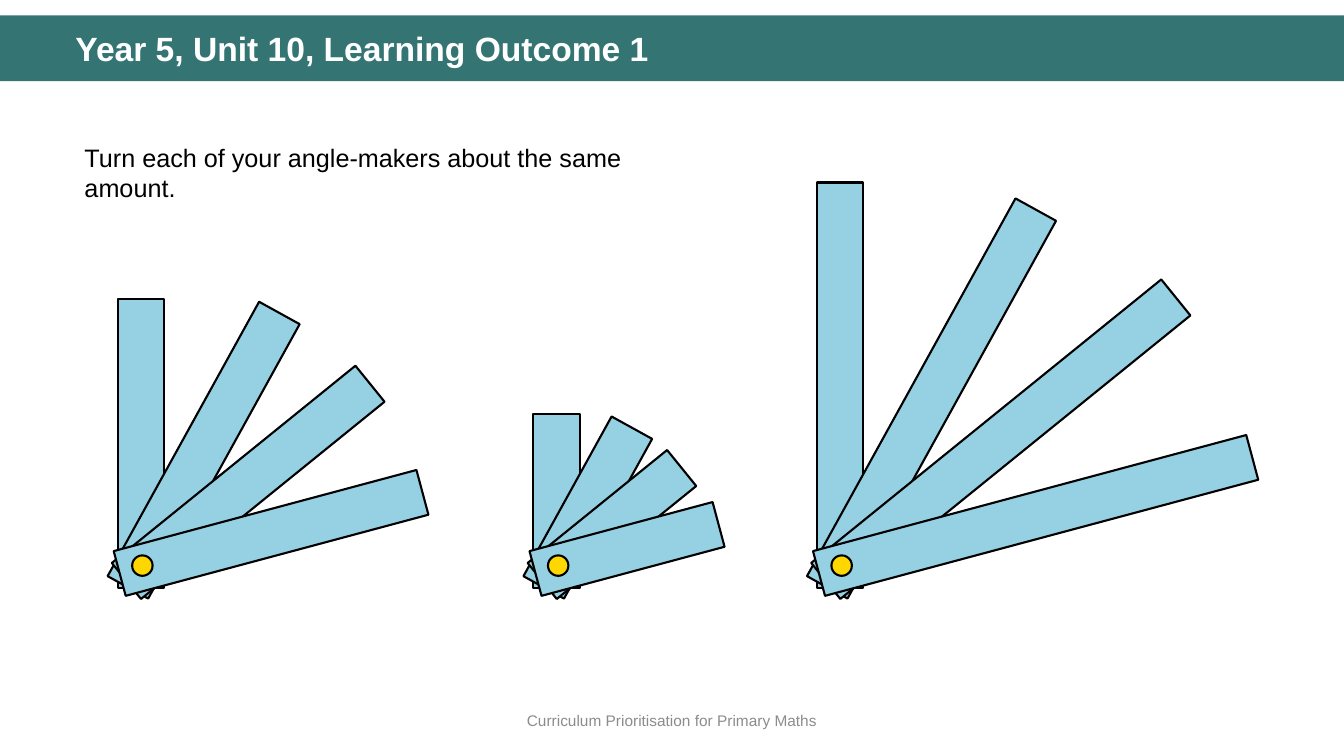
from math import cos, radians, sin
from pptx import Presentation
from pptx.dml.color import RGBColor as RGB
from pptx.enum.shapes import MSO_SHAPE as SHAPE
from pptx.enum.text import MSO_ANCHOR as ANCHOR, MSO_AUTO_SIZE as AUTO, PP_ALIGN as ALIGN
from pptx.util import Pt

THEME = {
    "font": "Arial",
    "banner": RGB(0x34, 0x75, 0x74),
    "strip": RGB(0x95, 0xD1, 0xE2),
    "pin": RGB(0xFF, 0xD7, 0x00),
    "outline": RGB(0, 0, 0),
    "title": {"size": Pt(24), "bold": True, "color": RGB(0xFF, 0xFF, 0xFF)},
    "body": {"size": Pt(18), "bold": False, "color": RGB(0, 0, 0)},
    "footer": {"size": Pt(11), "bold": False, "color": RGB(0x8C, 0x8C, 0x8C)},
}


def add_shape(kind, x, y, w, h, fill, outline=None):
    sp = s.shapes.add_shape(kind, Pt(x), Pt(y), Pt(w), Pt(h))
    sp.shadow.inherit = False
    sp.fill.solid()
    sp.fill.fore_color.rgb = fill
    if outline is None:
        sp.line.fill.background()
    else:
        sp.line.color.rgb = outline
        sp.line.width = Pt(1.5)
    return sp


def add_text(text, x, y, w, h, style, frame, para):
    tf = s.shapes.add_textbox(Pt(x), Pt(y), Pt(w), Pt(h)).text_frame
    p = tf.paragraphs[0]
    r = p.add_run()
    r.text = text
    font = {"name": THEME["font"], "size": style["size"], "bold": style["bold"]}
    for target, values in ((tf, {"word_wrap": True, **frame}), (p, para), (r.font, font)):
        for name, value in values.items():
            setattr(target, name, value)
    r.font.color.rgb = style["color"]


prs = Presentation()
prs.slide_width, prs.slide_height = Pt(960), Pt(540)
s = prs.slides.add_slide(prs.slide_layouts[6])

add_shape(SHAPE.RECTANGLE, 0, 11, 960, 47, THEME["banner"])
add_text("Year 5, Unit 10, Learning Outcome 1", 46.8, 19.4, 887, 33.8,
         THEME["title"], {}, {"line_spacing": 0.9})
add_text("Turn each of your angle-makers about the same amount.", 53.3, 97.9, 465, 51,
         THEME["body"], {"auto_size": AUTO.SHAPE_TO_FIT_TEXT}, {})
add_text("Curriculum Prioritisation for Primary Maths", 0, 500.4, 960, 28.8,
         THEME["footer"], {"vertical_anchor": ANCHOR.MIDDLE}, {"alignment": ALIGN.CENTER})

STRIP_WIDTH, PIN_SIZE, PIN_Y = 33.1, 14.6, 404
turns = [(0, 15.8, -1.1), (28.9, 18.6, -1.5), (51, 15.8, 1.4), (75, 17.1, 1.3)]
angle_makers = [
    (101.7, [205.9, 223.9, 223.9, 223.9]),
    (398.7, [123.8, 130.3, 128.2, 135.4]),
    (601.2, [289.4, 308.2, 321.8, 320.4]),
]
for pin_x, lengths in angle_makers:
    for (angle, tail, shift), length in zip(turns, lengths):
        a = radians(angle)
        reach = length / 2 - tail
        cx = pin_x + reach * sin(a) + shift * cos(a)
        cy = PIN_Y - reach * cos(a) + shift * sin(a)
        strip = add_shape(SHAPE.RECTANGLE, cx - STRIP_WIDTH / 2, cy - length / 2,
                          STRIP_WIDTH, length, THEME["strip"], THEME["outline"])
        strip.rotation = angle
    add_shape(SHAPE.OVAL, pin_x - PIN_SIZE / 2, PIN_Y - PIN_SIZE / 2,
              PIN_SIZE, PIN_SIZE, THEME["pin"], THEME["outline"])

prs.save("out.pptx")
